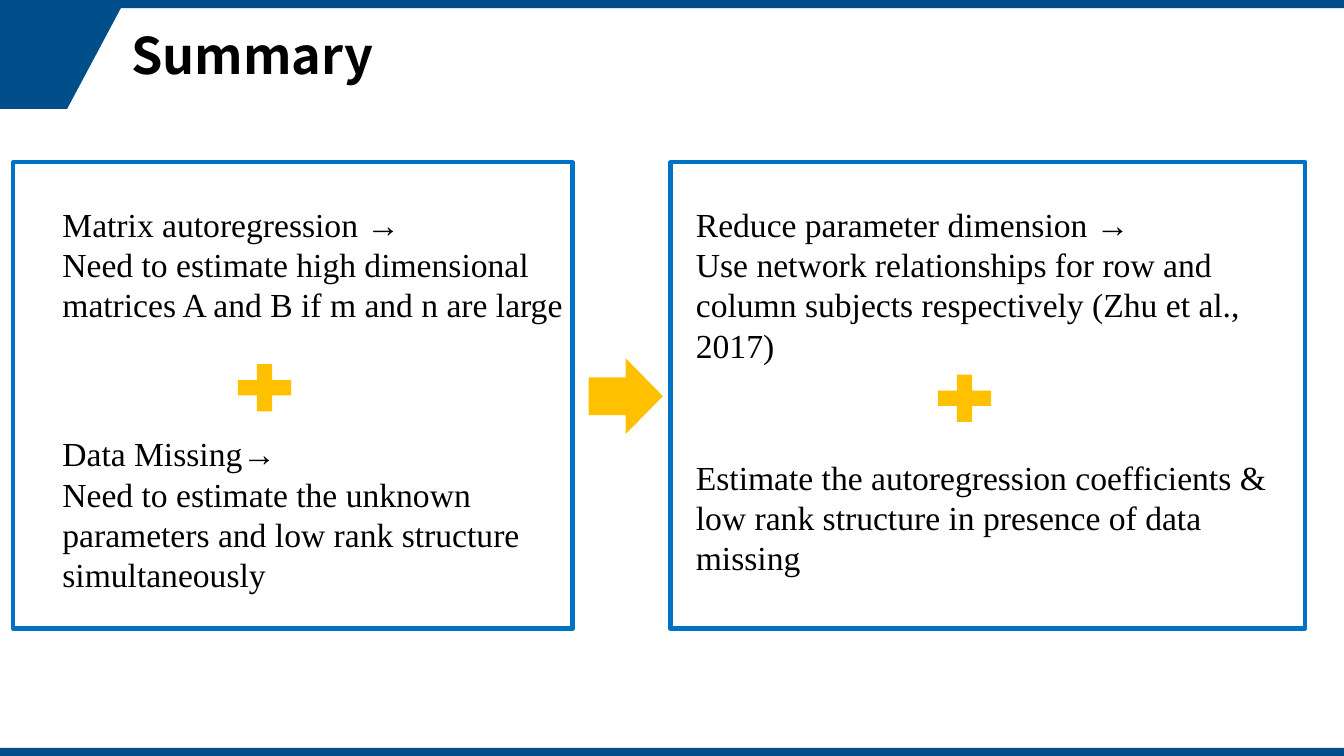
from pptx import Presentation
from pptx.dml.color import RGBColor
from pptx.enum.shapes import MSO_SHAPE
from pptx.enum.text import MSO_ANCHOR, MSO_AUTO_SIZE, PP_ALIGN
from pptx.util import Pt

WIDE, HIGH = 960, 540
BAR = 5.76
COLORS = {"band": "004F8A", "frame": "0072C5", "mark": "FFC000", "text": "000000"}


def color(name):
    return RGBColor.from_string(COLORS[name])


def paint(shape, name):
    shape.shadow.inherit = False
    shape.fill.solid()
    shape.fill.fore_color.rgb = color(name)
    shape.line.fill.background()


def add_mark(slide, kind, box, name="mark"):
    paint(slide.shapes.add_shape(kind, *map(Pt, box)), name)


def add_text(slide, box, lines):
    frame = slide.shapes.add_textbox(*map(Pt, box)).text_frame
    frame.word_wrap = True
    frame.text = "\n".join(lines)
    for para in frame.paragraphs:
        para.font.name = "Times New Roman"
        para.font.size = Pt(24)
        para.font.color.rgb = color("text")


def add_bands(slide):
    # Slanted corner, then top and bottom bars
    build = slide.shapes.build_freeform(0, Pt(BAR))
    build.add_line_segments(
        [(Pt(x), Pt(y)) for x, y in [(86.4, BAR), (48, 77.76), (0, 77.76)]])
    paint(build.convert_to_shape(), "band")
    for top in (0, HIGH - BAR):
        add_mark(slide, MSO_SHAPE.RECTANGLE, (0, top, WIDE, BAR), "band")


def add_title(slide, box, text):
    title = slide.shapes.title
    title.left, title.top, title.width, title.height = map(Pt, box)
    frame = title.text_frame
    frame.text = text
    frame.auto_size = MSO_AUTO_SIZE.NONE
    frame.vertical_anchor = MSO_ANCHOR.MIDDLE
    para = frame.paragraphs[0]
    para.alignment = PP_ALIGN.LEFT
    para.line_spacing = 0.9
    para.font.name = "Noto Sans CJK SC"
    para.font.size = Pt(36)
    para.font.bold = True
    para.font.color.rgb = color("text")


def add_panel(slide, box, plus, texts):
    # Frame with two texts and a plus sign, all offset from its corner
    left, top, width, height = box
    for (x, y, w, h), lines in texts:
        add_text(slide, (left + x, top + y, w, h), lines)
    frame = slide.shapes.add_shape(MSO_SHAPE.RECTANGLE, *map(Pt, box))
    frame.shadow.inherit = False
    frame.fill.background()
    frame.line.color.rgb = color("frame")
    frame.line.width = Pt(3)
    x, y = plus
    add_mark(slide, MSO_SHAPE.MATH_PLUS, (left + x, top + y, 52, 46))


def main():
    deck = Presentation()
    deck.slide_width, deck.slide_height = Pt(WIDE), Pt(HIGH)
    slide = deck.slides.add_slide(deck.slide_layouts[5])
    add_bands(slide)
    add_title(slide, (86.4, BAR, 808, 72), "Summary")

    # Problems on the left
    add_panel(slide, (9.5, 116, 399.5, 333), (153.5, 138), [
        ((28, 26, 373, 94), [
            "Matrix autoregression →",
            "Need to estimate high dimensional matrices A and B if m and n are large"]),
        ((28, 190, 396, 124), [
            "Data Missing→",
            "Need to estimate the unknown parameters and low rank structure simultaneously"]),
    ])
    # Solutions on the right
    add_panel(slide, (479, 116, 453.5, 333), (184, 145.5), [
        ((11, 26, 437, 124), [
            "Reduce parameter dimension →",
            "Use network relationships for row and column subjects respectively (Zhu et al., 2017)"]),
        ((11, 206.5, 449, 94), [
            "Estimate the autoregression coefficients & low rank structure in presence of data missing"]),
    ])
    add_mark(slide, MSO_SHAPE.RIGHT_ARROW, (420.5, 256, 53, 54))
    deck.save("out.pptx")


if __name__ == "__main__":
    main()
